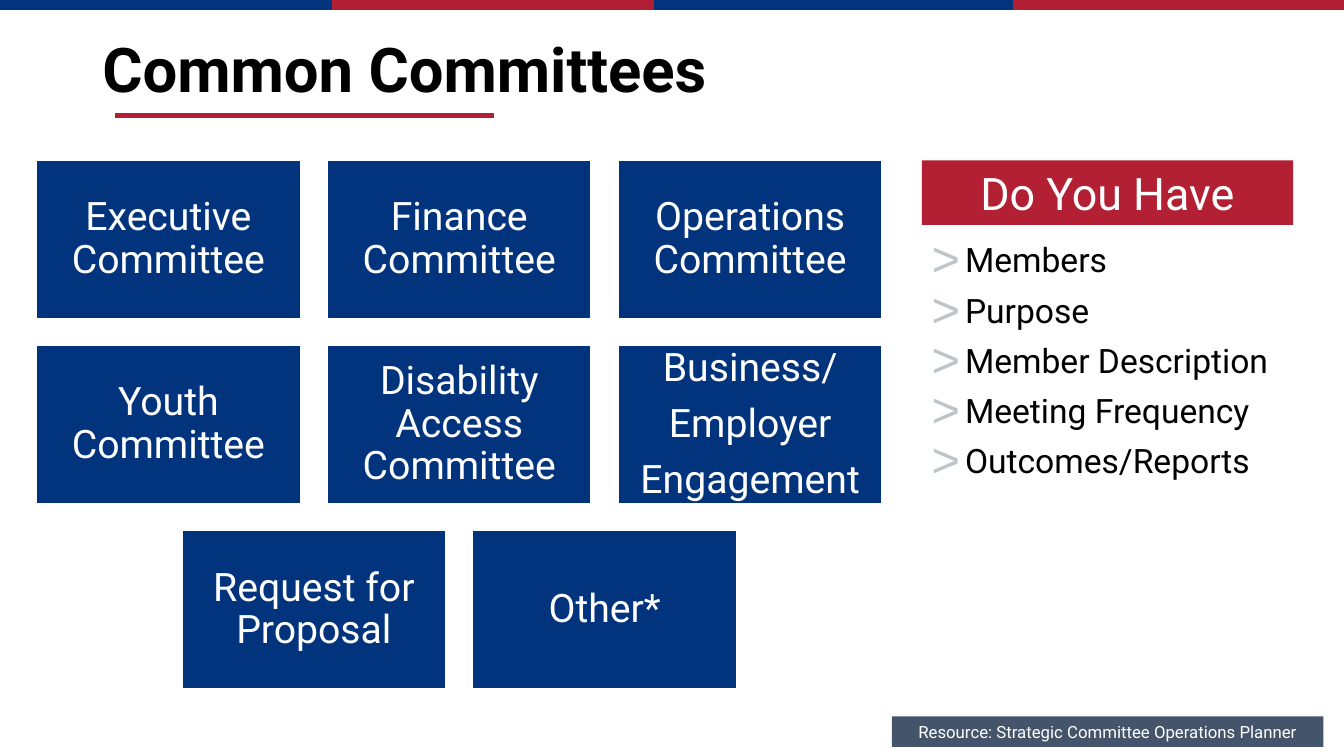
from dataclasses import dataclass

from lxml import etree
from pptx import Presentation
from pptx.dml.color import RGBColor
from pptx.enum import shapes, text
from pptx.oxml import ns
from pptx.util import Cm, Pt


@dataclass(frozen=True)
class Theme:
    """Colours, font and type sizes of the slide."""
    navy: str = "02347E"
    red: str = "B01F33"
    banner: str = "B32033"
    slate: str = "44546A"
    bullet: str = "BEC4C7"
    white: str = "FFFFFF"
    black: str = "000000"
    font: str = "Roboto"
    title: int = 44
    heading: int = 32
    card: int = 28
    body: int = 24
    note: int = 12


T = Theme()
COMMITTEES = [
    [["Executive Committee"], ["Finance Committee"], ["Operations Committee"]],
    [["Youth Committee"], ["Disability Access Committee"],
     ["Business/", "Employer", "Engagement"]],
    [["Request for Proposal"], ["Other*"]],
]
NEEDS = ["Members", "Purpose", "Member Description", "Meeting Frequency",
         "Outcomes/Reports"]


def set_attrs(obj, values):
    """Set each attribute of obj from a dict."""
    for name, value in values.items():
        setattr(obj, name, value)


def write(sp, lines, size, color, align, spacing=1.0, gap=0, inset=None,
          anchor=text.MSO_ANCHOR.MIDDLE, bold=False, bullet=None):
    """Fill a shape with one formatted paragraph per line."""
    tf = sp.text_frame
    set_attrs(tf, {"word_wrap": True, "vertical_anchor": anchor})
    if inset is not None:
        sides = ("left", "top", "right", "bottom")
        set_attrs(tf, {f"margin_{side}": Cm(inset) for side in sides})
    for i, line in enumerate(lines):
        p = tf.add_paragraph() if i else tf.paragraphs[0]
        set_attrs(p, {"alignment": align, "line_spacing": spacing,
                      "space_before": Pt(gap if i else 0)})
        if bullet:
            add_bullet(p, bullet)
        r = p.add_run()
        r.text = line
        set_attrs(r.font, {"name": T.font, "size": Pt(size), "bold": bold})
        r.font.color.rgb = RGBColor.from_string(color)


def add_bullet(p, char):
    """Give a paragraph a hanging, enlarged grey bullet."""
    pPr = p._p.get_or_add_pPr()
    pPr.set("marL", str(Cm(0.84)))
    pPr.set("indent", str(-Cm(0.84)))
    clr = etree.SubElement(pPr, ns.qn("a:buClr"))
    etree.SubElement(clr, ns.qn("a:srgbClr"), val=T.bullet)
    etree.SubElement(pPr, ns.qn("a:buSzPct"), val="145000")
    etree.SubElement(pPr, ns.qn("a:buFont"), typeface="Arial")
    etree.SubElement(pPr, ns.qn("a:buChar"), char=char)


def add_rule(s, x1, x2, y, color, width):
    """Draw a horizontal line."""
    ln = s.shapes.add_connector(shapes.MSO_CONNECTOR.STRAIGHT,
                                Cm(x1), Cm(y), Cm(x2), Cm(y))
    ln.line.color.rgb = RGBColor.from_string(color)
    ln.line.width = Pt(width)
    etree.SubElement(ln._element.spPr, ns.qn("a:effectLst"))


def add_block(s, x, y, w, h, color, lines, size, **style):
    """Draw a filled rectangle with centred white text."""
    sp = s.shapes.add_shape(shapes.MSO_SHAPE.RECTANGLE,
                            Cm(x), Cm(y), Cm(w), Cm(h))
    sp.shadow.inherit = False
    sp.fill.solid()
    sp.fill.fore_color.rgb = RGBColor.from_string(color)
    sp.line.fill.background()
    write(sp, lines, size, T.white, text.PP_ALIGN.CENTER, **style)
    return sp


def add_header(s, x, y, w, h):
    """Place the top stripe, the title and its underline."""
    stripes = [(0, 8.79, T.navy), (8.36, 16.48, T.red),
               (16.48, 26.14, T.navy), (25.53, 33.87, T.red)]
    for x1, x2, color in stripes:
        add_rule(s, x1, x2, y + 0.1, color, 8)
    add_rule(s, x + 0.56, x + 10.11, y + 2.92, T.red, 3.5)
    sp = s.shapes.add_textbox(Cm(x), Cm(y), Cm(w), Cm(h))
    write(sp, ["Common Committees"], T.title, T.black, text.PP_ALIGN.LEFT,
          spacing=0.9, bold=True)


def add_committees(s, x, y, w, h):
    """Place the committee cards in rows centred in the box."""
    gap = 0.68
    card_w = (w - 2 * gap) / 3
    card_h = (h - 2 * gap) / 3
    for row, cards in enumerate(COMMITTEES):
        left = x + (3 - len(cards)) * (card_w + gap) / 2
        for col, lines in enumerate(cards):
            sp = add_block(s, left + col * (card_w + gap),
                           y + row * (card_h + gap), card_w, card_h, T.navy,
                           lines, T.card, spacing=0.9, gap=9.8, inset=0.3)
            sp.line.color.rgb = RGBColor.from_string(T.white)
            sp.line.width = Pt(1)


def add_checklist(s, x, y, w, h):
    """Place the banner and the bulleted list below it."""
    add_block(s, x, y, w, 1.63, T.banner, ["Do You Have"], T.heading)
    top = 1.98
    sp = s.shapes.add_textbox(Cm(x), Cm(y + top), Cm(w), Cm(h - top))
    write(sp, NEEDS, T.body, T.black, text.PP_ALIGN.LEFT, spacing=0.9, gap=10,
          anchor=text.MSO_ANCHOR.TOP, bullet=">")


def main():
    """Build and save the slide."""
    prs = Presentation()
    set_attrs(prs, {"slide_width": Cm(33.87), "slide_height": Cm(19.05)})
    s = prs.slides.add_slide(prs.slide_layouts[6])
    add_header(s, 2.33, 0, 29.21, 3.68)
    add_committees(s, 0.92, 4.04, 21.31, 13.31)
    add_checklist(s, 23.23, 4.04, 9.36, 14.07)
    add_block(s, 22.48, 18.05, 10.87, 0.77, T.slate,
              ["Resource: Strategic Committee Operations Planner"], T.note)
    prs.save("out.pptx")


if __name__ == "__main__":
    main()
